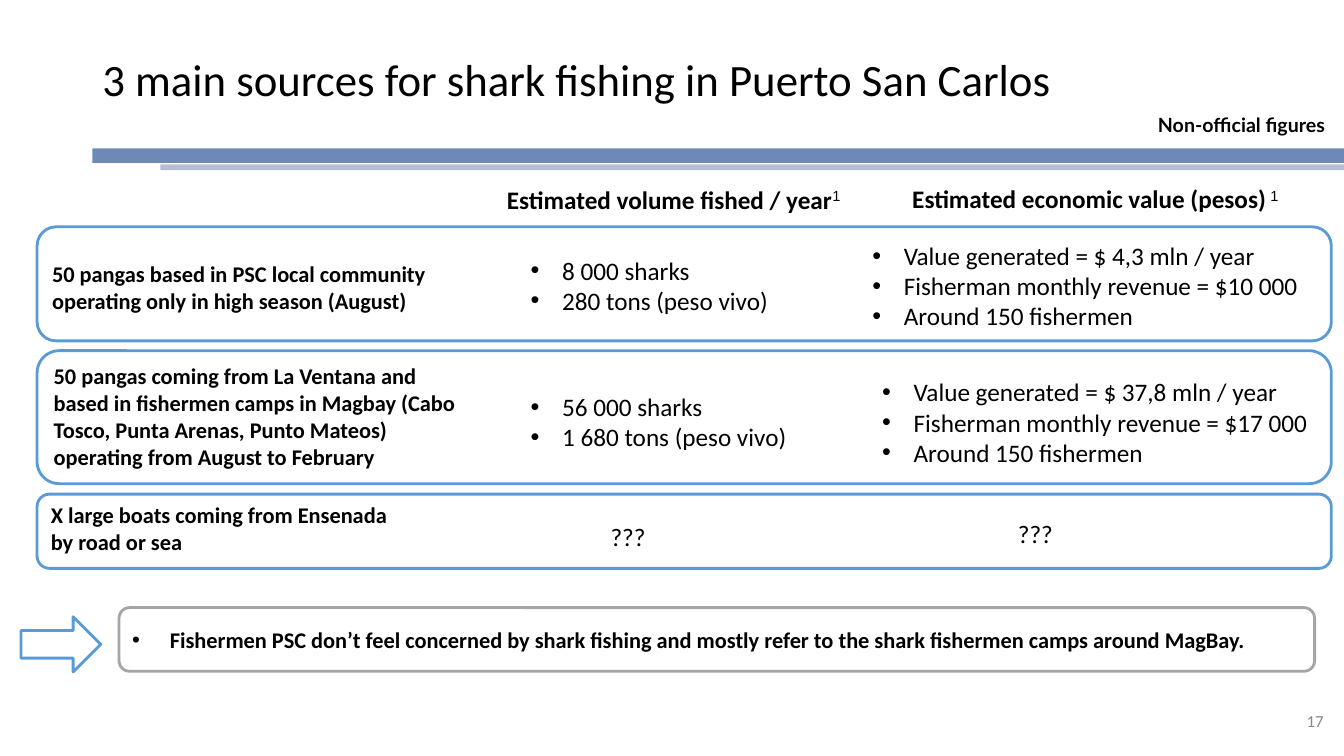
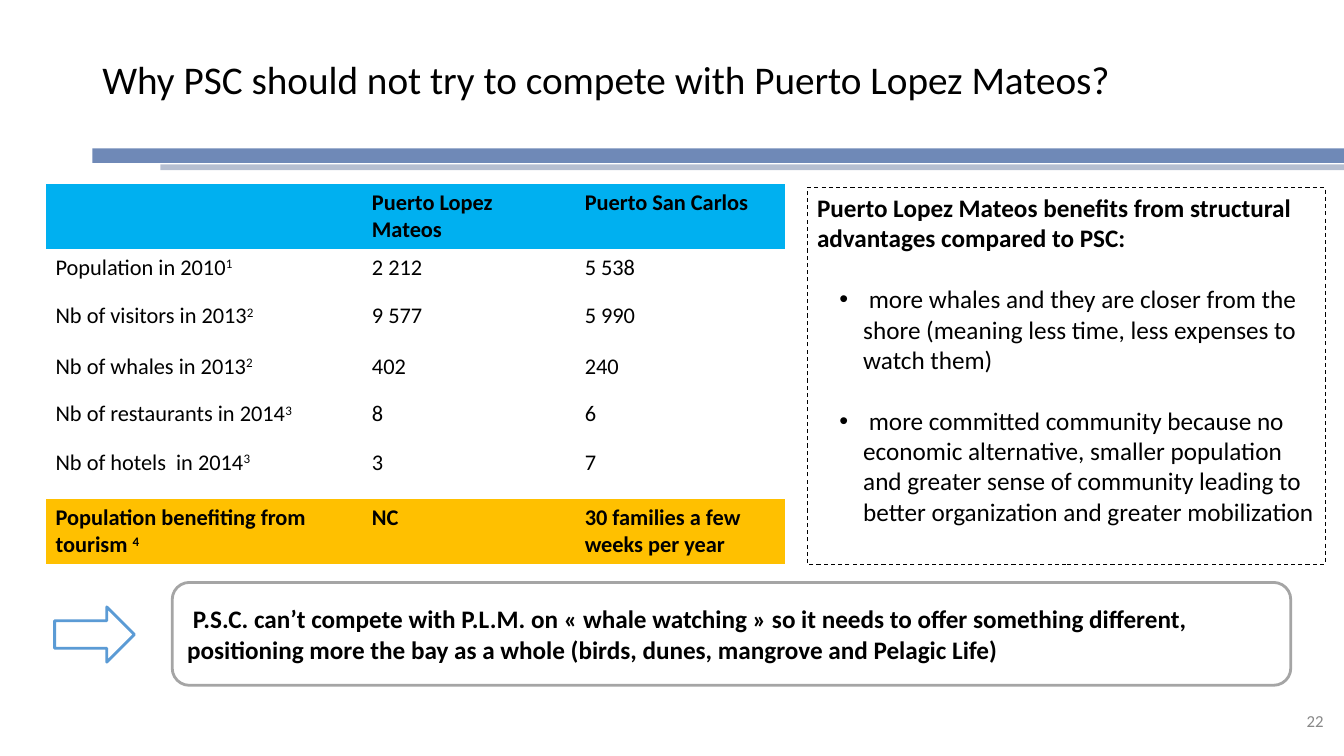
"""Build two slides on shark fishing and whale watching in Puerto San Carlos."""
from dataclasses import dataclass

from lxml import etree
from pptx import Presentation
from pptx.dml.color import RGBColor
from pptx.enum.dml import MSO_LINE
from pptx.enum.shapes import MSO_SHAPE
from pptx.enum.text import MSO_ANCHOR, PP_ALIGN
from pptx.oxml.ns import qn
from pptx.util import Pt

RECTANGLE = MSO_SHAPE.RECTANGLE
ROUNDED = MSO_SHAPE.ROUNDED_RECTANGLE
ARROW = MSO_SHAPE.RIGHT_ARROW
DASH = MSO_LINE.DASH
TOP, MIDDLE = MSO_ANCHOR.TOP, MSO_ANCHOR.MIDDLE
LEFT, RIGHT = PP_ALIGN.LEFT, PP_ALIGN.RIGHT
NO_TABLE_STYLE = "{2D5ABB26-0587-4C30-8999-92F81FD0307C}"


@dataclass(frozen=True)
class Theme:
    black: str = "000000"
    white: str = "FFFFFF"
    grey: str = "888888"
    blue: str = "5B9BD5"
    frame_grey: str = "A5A5A5"
    band: str = "2F5597"
    thin_band: str = "002060"
    header: str = "00B0F0"
    highlight: str = "FFC000"
    font: str = "Calibri"
    note_font: str = "Arial"
    tag_font: str = "Lato"
    title: int = 32
    long_title: int = 28
    large: int = 18
    medium: int = 16
    small: int = 14
    page: int = 12
    line: float = 2
    thin_line: float = 0.75


THEME = Theme()


@dataclass(frozen=True)
class Text:
    text: str
    size: int = THEME.large
    bold: bool = False
    color: str = THEME.black
    font: str = THEME.font
    align: PP_ALIGN = LEFT
    bullet: tuple = ()
    gap: float = 0
    spacing: float = 1
    note: str = ""
    note_font: str = THEME.font
    note_bold: bool = False


class Deck:
    def __init__(self):
        self.presentation = Presentation()
        self.presentation.slide_width = Pt(960)
        self.presentation.slide_height = Pt(540)
        self.slide = None

    def start_slide(self, title, title_size, number):
        self.slide = self.presentation.slides.add_slide(self.presentation.slide_layouts[6])
        self.shape(RECTANGLE, 66, 106, 894, 10.5, fill=THEME.band, opacity=69)
        self.shape(RECTANGLE, 114.5, 117.5, 845.5, 4, fill=THEME.thin_band, opacity=29)
        self.text(66, 19, 868, 79, [Text(title, title_size, spacing=0.9)], MIDDLE)
        page = Text(str(number), THEME.page, color=THEME.grey, align=RIGHT)
        self.text(736.5, 500.5, 216, 29, [page], MIDDLE)

    def shape(self, kind, left, top, width, height, fill=None, line=None,
              line_width=THEME.line, dash=None, opacity=100, texts=(), anchor=MIDDLE):
        shape = self.slide.shapes.add_shape(kind, Pt(left), Pt(top), Pt(width), Pt(height))
        shape.shadow.inherit = False
        if fill:
            shape.fill.solid()
            shape.fill.fore_color.rgb = RGBColor.from_string(fill)
            if opacity < 100:
                color = shape._element.spPr.find(qn("a:solidFill"))[0]
                etree.SubElement(color, qn("a:alpha")).set("val", str(opacity * 1000))
        else:
            shape.fill.background()
        if line:
            shape.line.color.rgb = RGBColor.from_string(line)
            shape.line.width = Pt(line_width)
            if dash:
                shape.line.dash_style = dash
        else:
            shape.line.fill.background()
        if texts:
            self.set_texts(shape.text_frame, texts, anchor)

    def text(self, left, top, width, height, texts, anchor=TOP):
        box = self.slide.shapes.add_textbox(Pt(left), Pt(top), Pt(width), Pt(height))
        self.set_texts(box.text_frame, texts, anchor)

    def set_texts(self, text_frame, texts, anchor):
        text_frame.word_wrap = True
        text_frame.vertical_anchor = anchor
        for index, item in enumerate(texts):
            paragraph = text_frame.add_paragraph() if index else text_frame.paragraphs[0]
            self.set_paragraph(paragraph, item)

    def set_paragraph(self, paragraph, item):
        paragraph.text = item.text
        if item.bullet:
            margin, hanging = item.bullet
            properties = paragraph._p.get_or_add_pPr()
            properties.set("marL", str(Pt(margin)))
            properties.set("indent", str(-Pt(hanging)))
            etree.SubElement(properties, qn("a:buFont")).set("typeface", THEME.note_font)
            etree.SubElement(properties, qn("a:buChar")).set("char", "•")
        paragraph.alignment = item.align
        paragraph.line_spacing = item.spacing
        if item.gap:
            paragraph.space_before = Pt(item.gap)
        for run in paragraph.runs:
            self.format_run(run, item, item.font, item.bold)
        if item.note:
            run = paragraph.add_run()
            run.text = item.note
            self.format_run(run, item, item.note_font, item.note_bold)
            run._r.get_or_add_rPr().set("baseline", "30000")

    def format_run(self, run, item, font, bold):
        run.font.name = font
        run.font.size = Pt(item.size)
        run.font.bold = bold
        run.font.color.rgb = RGBColor.from_string(item.color)

    def table(self, left, top, widths, heights, rows, fills):
        frame = self.slide.shapes.add_table(
            len(rows), len(widths), Pt(left), Pt(top), Pt(sum(widths)), Pt(sum(heights)))
        table = frame.table
        table._tbl.tblPr.find(qn("a:tableStyleId")).text = NO_TABLE_STYLE
        table.first_row = table.horz_banding = False
        for column, width in zip(table.columns, widths):
            column.width = Pt(width)
        for row, height, texts, fill in zip(table.rows, heights, rows, fills):
            row.height = Pt(height)
            for cell, item in zip(row.cells, texts):
                cell.fill.solid()
                cell.fill.fore_color.rgb = RGBColor.from_string(fill)
                self.set_paragraph(cell.text_frame.paragraphs[0], item)

    def arrow(self, left, top):
        self.shape(ARROW, left, top, 57, 39.5, THEME.white, THEME.blue)

    def conclusion(self, left, top, width, height, item):
        self.shape(ROUNDED, left, top, width, height, THEME.white, THEME.frame_grey, texts=[item])


def bullets(lines):
    return [Text(line, bullet=(22.5, 22.5)) for line in lines]


def build_fishing(deck):
    deck.start_slide("3 main sources for shark fishing in Puerto San Carlos", THEME.title, 17)
    headings = [
        (355, 128, 266, "Estimated volume fished / year", "1"),
        (644.5, 127.5, 300, "Estimated economic value (pesos)", " 1"),
    ]
    for left, top, width, heading, note in headings:
        item = Text(heading, bold=True, note=note, note_font=THEME.note_font)
        deck.text(left, top, width, 29, [item])
    sources = [
        ((162, 81.5), (168, 74),
         "50 pangas based in PSC local community operating only in high season (August)"),
        ((250.5, 95), (248, 98),
         "50 pangas coming from La Ventana and based in fishermen camps in Magbay "
         "(Cabo Tosco, Punta Arenas, Punto Mateos) operating from August to February"),
        ((353, 53), (349, 56), "X large boats coming from Ensenada \vby road or sea"),
    ]
    for (top, height), (label_top, label_height), label in sources:
        deck.shape(ROUNDED, 26.5, label_top, 323, label_height, THEME.white,
                   texts=[Text(label, THEME.medium, True)])
        deck.shape(ROUNDED, 26.5, top, 924.5, height, line=THEME.blue)
    figures = [
        (372, 178.5, 249, ["8 000 sharks", "280 tons (peso vivo)"]),
        (616, 168, 337, ["Value generated = $ 4,3 mln / year",
                         "Fisherman monthly revenue = $10 000", "Around 150 fishermen"]),
        (372, 276, 249, ["56 000 sharks", "1 680 tons (peso vivo)"]),
        (623, 265.5, 337, ["Value generated = $ 37,8 mln / year",
                           "Fisherman monthly revenue = $17 000", "Around 150 fishermen"]),
    ]
    for left, top, width, lines in figures:
        deck.text(left, top, width, 22 * len(lines) + 7, bullets(lines))
    for left, top in ((429, 368.5), (720, 366.5)):
        deck.text(left, top, 73, 29, [Text("???")])
    deck.conclusion(85, 434, 854, 45.5, Text(
        "Fishermen PSC don’t feel concerned by shark fishing and mostly refer to "
        "the shark fishermen camps around MagBay.",
        THEME.medium, True, bullet=(27, 27)))
    deck.arrow(15, 440.5)
    deck.text(820, 77, 140, 24.5,
              [Text("Non-official figures", THEME.small, True, font=THEME.tag_font)])


def build_comparison(deck):
    deck.start_slide("Why PSC should not try to compete with Puerto Lopez Mateos?",
                     THEME.long_title, 22)
    records = [
        ("", "", "Puerto Lopez Mateos", "Puerto San Carlos"),
        ("Population in 2010", "1", "2 212", "5 538"),
        ("Nb of visitors in 2013", "2", "9 577", "5 990"),
        ("Nb of whales in 2013", "2", "402", "240"),
        ("Nb of restaurants in 2014", "3", "8", "6"),
        ("Nb of hotels  in 2014", "3", "3", "7"),
        ("Population benefiting from tourism ", "4", "NC", "30 families a few weeks per year"),
    ]
    fills = [THEME.header] + [THEME.white] * 5 + [THEME.highlight]
    rows = []
    for (label, note, *values), fill in zip(records, fills):
        bold = fill != THEME.white
        first = Text(label, THEME.medium, bold, note=note, note_bold=bold)
        rows.append([first] + [Text(value, THEME.medium, bold) for value in values])
    deck.table(32.5, 131.5, [226, 152, 150], [46.5, 34.5, 36, 34, 34.5, 39.5, 46.5], rows, fills)
    advantages = [
        " more whales and they are closer from the shore (meaning less time, "
        "less expenses to watch them)",
        " more committed community because no economic alternative, smaller population "
        "and greater sense of community leading to better organization and greater mobilization",
    ]
    heading = Text("Puerto Lopez Mateos benefits from structural advantages compared to PSC:",
                   bold=True)
    deck.shape(RECTANGLE, 576.5, 134, 370, 269, line=THEME.black, line_width=THEME.thin_line,
               dash=DASH, anchor=TOP,
               texts=[heading] + [Text(line, bullet=(33, 17), gap=22) for line in advantages])
    deck.conclusion(123, 416, 799, 73.5, Text(
        " P.S.C. can’t compete with P.L.M. on « whale watching » so it needs to offer "
        "something different, positioning more the bay as a whole "
        "(birds, dunes, mangrove and Pelagic Life)", bold=True))
    deck.arrow(39, 433.5)


def main():
    deck = Deck()
    build_fishing(deck)
    build_comparison(deck)
    deck.presentation.save("out.pptx")


if __name__ == "__main__":
    main()
